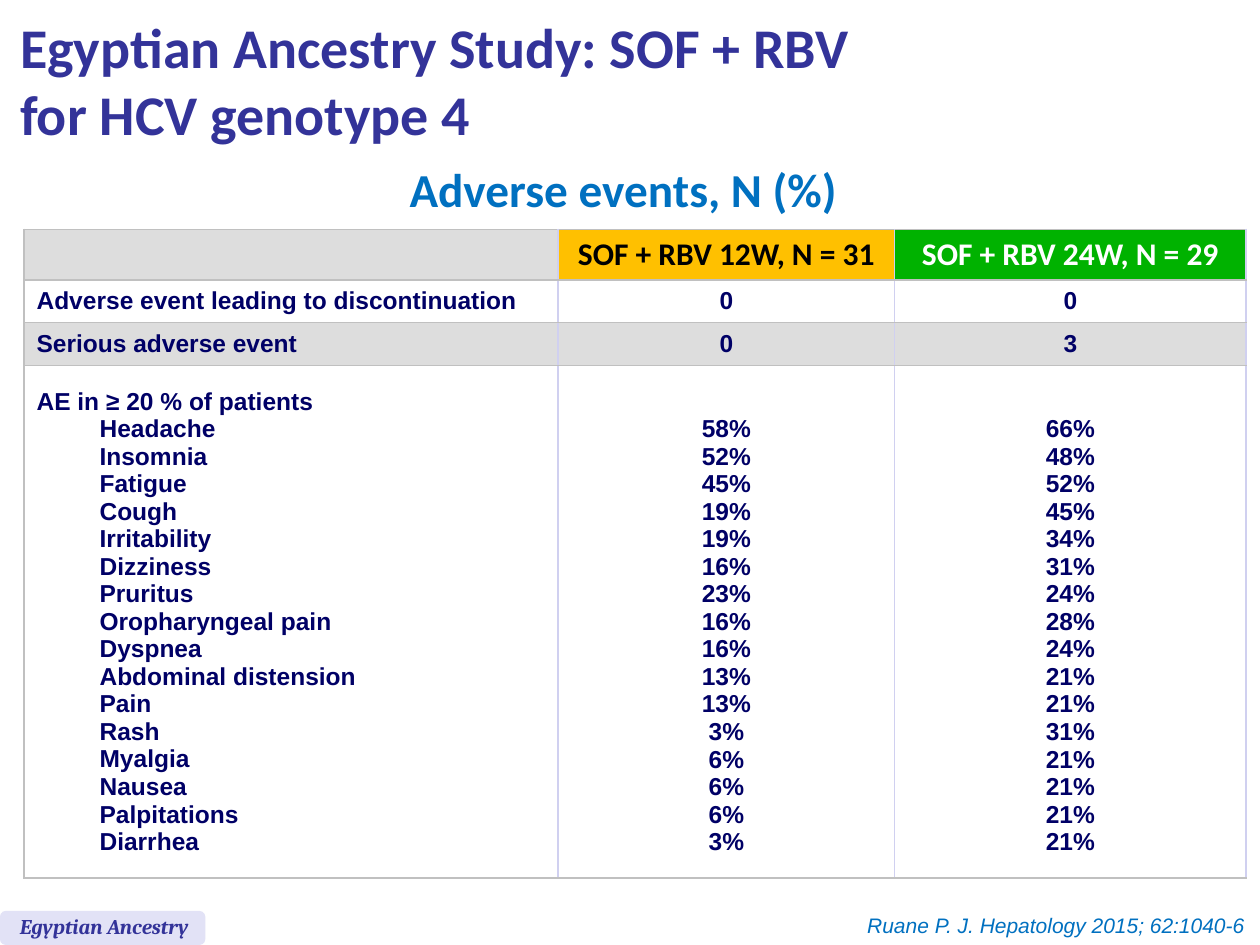
from dataclasses import dataclass

from lxml import etree
from pptx import Presentation
from pptx.dml.color import RGBColor
from pptx.enum.shapes import MSO_SHAPE
from pptx.enum.text import MSO_ANCHOR, PP_ALIGN
from pptx.oxml.ns import qn
from pptx.util import Inches, Pt

LEFT, CENTER, RIGHT = PP_ALIGN.LEFT, PP_ALIGN.CENTER, PP_ALIGN.RIGHT
MIDDLE = MSO_ANCHOR.MIDDLE
ROUNDED = MSO_SHAPE.ROUNDED_RECTANGLE


@dataclass(frozen=True)
class Theme:
    heading: str = "Calibri"
    body: str = "Arial"
    tag: str = "Cambria"
    title_color: str = "333399"
    accent: str = "0070C0"
    text: str = "000066"
    black: str = "000000"
    white: str = "FFFFFF"
    band: str = "DDDDDD"
    arm_12w: str = "FFC000"
    arm_24w: str = "00B200"
    tag_fill: str = "E2E2F6"
    row_rule: str = "C0C0C0"
    column_rule: str = "D0D0F0"
    title_size: int = 32
    subtitle_size: int = 27
    header_size: int = 18
    body_size: int = 14
    footer_size: int = 12


THEME = Theme()

COLUMN_WIDTHS = (4.24, 2.67, 2.79)
ROW_HEIGHTS = (0.4, 0.34, 0.34, 4.07)
LINE_HEIGHT = 0.22
ARMS = (
    ("SOF + RBV 12W, N = 31", THEME.black, THEME.arm_12w),
    ("SOF + RBV 24W, N = 29", THEME.white, THEME.arm_24w),
)
SUMMARY_ROWS = (
    ("Adverse event leading to discontinuation", "0", "0", THEME.white),
    ("Serious adverse event", "0", "3", THEME.band),
)
# Event, percentage at 12 weeks, percentage at 24 weeks
EVENTS = (
    ("Headache", 58, 66),
    ("Insomnia", 52, 48),
    ("Fatigue", 45, 52),
    ("Cough", 19, 45),
    ("Irritability", 19, 34),
    ("Dizziness", 16, 31),
    ("Pruritus", 23, 24),
    ("Oropharyngeal pain", 16, 28),
    ("Dyspnea", 16, 24),
    ("Abdominal distension", 13, 21),
    ("Pain", 13, 21),
    ("Rash", 3, 31),
    ("Myalgia", 6, 21),
    ("Nausea", 6, 21),
    ("Palpitations", 6, 21),
    ("Diarrhea", 3, 21),
)


def format_paragraph(paragraph, font_name, size, color, align=LEFT, bold=True, italic=False):
    paragraph.alignment = align
    font = paragraph.font
    font.name, font.size = font_name, Pt(size)
    font.bold, font.italic = bold, italic
    font.color.rgb = RGBColor.from_string(color)


def add_label(slide, box, text, *style, **options):
    shape = slide.shapes.add_textbox(*map(Inches, box))
    shape.text_frame.word_wrap = True
    shape.text_frame.text = text
    format_paragraph(shape.text_frame.paragraphs[0], *style, **options)


def set_borders(cell, first_column):
    left = THEME.row_rule if first_column else THEME.column_rule
    colors = (("L", left), ("R", THEME.column_rule), ("T", THEME.row_rule), ("B", THEME.row_rule))
    properties = cell._tc.get_or_add_tcPr()
    for side, color in colors:
        line = etree.SubElement(properties, qn(f"a:ln{side}"), w=str(Pt(1)))
        fill = etree.SubElement(line, qn("a:solidFill"))
        etree.SubElement(fill, qn("a:srgbClr"), val=color)


def fill_cell(cell, lines, fill, font_name, size, color, align):
    cell.vertical_anchor = MIDDLE
    cell.text = "\n".join(lines)
    cell.fill.solid()
    cell.fill.fore_color.rgb = RGBColor.from_string(fill)
    for paragraph in cell.text_frame.paragraphs:
        format_paragraph(paragraph, font_name, size, color, align)


def add_title(slide, box):
    title = slide.shapes.title
    title.left, title.top, title.width, title.height = map(Inches, box)
    title.text_frame.vertical_anchor = MIDDLE
    title.text_frame.text = "Egyptian Ancestry Study: SOF + RBV \vfor HCV genotype 4"
    format_paragraph(title.text_frame.paragraphs[0], THEME.heading, THEME.title_size,
                     THEME.title_color)


def add_events_table(slide, box):
    frame = slide.shapes.add_table(len(ROW_HEIGHTS), len(COLUMN_WIDTHS), *map(Inches, box))
    table = frame.table
    table.first_row = table.horz_banding = False
    for column, width in zip(table.columns, COLUMN_WIDTHS):
        column.width = Inches(width)
    for row, height in zip(table.rows, ROW_HEIGHTS):
        row.height = Inches(height)
        for index, cell in enumerate(row.cells):
            set_borders(cell, index == 0)

    # Header row
    header_font = (THEME.heading, THEME.header_size)
    fill_cell(table.cell(0, 0), [""], THEME.band, *header_font, THEME.black, LEFT)
    for index, (name, color, fill) in enumerate(ARMS, 1):
        fill_cell(table.cell(0, index), [name], fill, *header_font, color, CENTER)

    # Summary rows
    body_style = (THEME.body, THEME.body_size, THEME.text)
    for row, (*texts, fill) in enumerate(SUMMARY_ROWS, 1):
        for index, text in enumerate(texts):
            align = CENTER if index else LEFT
            fill_cell(table.cell(row, index), [text], fill, *body_style, align)

    # Frequent events, indented under their heading
    last = len(ROW_HEIGHTS) - 1
    names, *arms = zip(*EVENTS)
    name_cell = table.cell(last, 0)
    fill_cell(name_cell, ["AE in ≥ 20 % of patients", *names], THEME.white, *body_style, LEFT)
    for paragraph in name_cell.text_frame.paragraphs[1:]:
        paragraph.level = 1
        properties = paragraph._p.get_or_add_pPr()
        properties.set("marL", str(Inches(0.5)))
        properties.set("indent", "0")

    # Percentages start one line lower, level with the first event
    for index, values in enumerate(arms, 1):
        cell = table.cell(last, index)
        fill_cell(cell, [f"{value}%" for value in values], THEME.white, *body_style, CENTER)
        cell.margin_top = Inches(0.05 + LINE_HEIGHT)


def add_study_tag(slide, box):
    left, top, width, height = box
    tag = slide.shapes.add_shape(ROUNDED, *map(Inches, box))
    tag.shadow.inherit = False
    tag.adjustments[0] = 0.17
    tag.fill.solid()
    tag.fill.fore_color.rgb = RGBColor.from_string(THEME.tag_fill)
    tag.line.fill.background()
    add_label(slide, (left + 0.06, top - 0.03, width - 0.06, height + 0.03), "Egyptian Ancestry",
              THEME.tag, THEME.footer_size, THEME.title_color, italic=True)


def main():
    presentation = Presentation()
    presentation.slide_width, presentation.slide_height = Inches(10), Inches(7.5)
    slide = presentation.slides.add_slide(presentation.slide_layouts[5])
    add_title(slide, (0.06, 0.03, 9.55, 1.21))
    add_label(slide, (0, 1.22, 9.89, 0.56), "Adverse events, N (%)",
              THEME.heading, THEME.subtitle_size, THEME.accent, align=CENTER)
    add_events_table(slide, (0.19, 1.82, sum(COLUMN_WIDTHS), sum(ROW_HEIGHTS)))
    add_study_tag(slide, (0, 7.23, 1.63, 0.27))
    add_label(slide, (6.17, 7.19, 3.81, 0.3), "Ruane P. J. Hepatology 2015; 62:1040-6",
              THEME.body, THEME.footer_size, THEME.accent, align=RIGHT, bold=False, italic=True)
    presentation.save("out.pptx")


if __name__ == "__main__":
    main()
